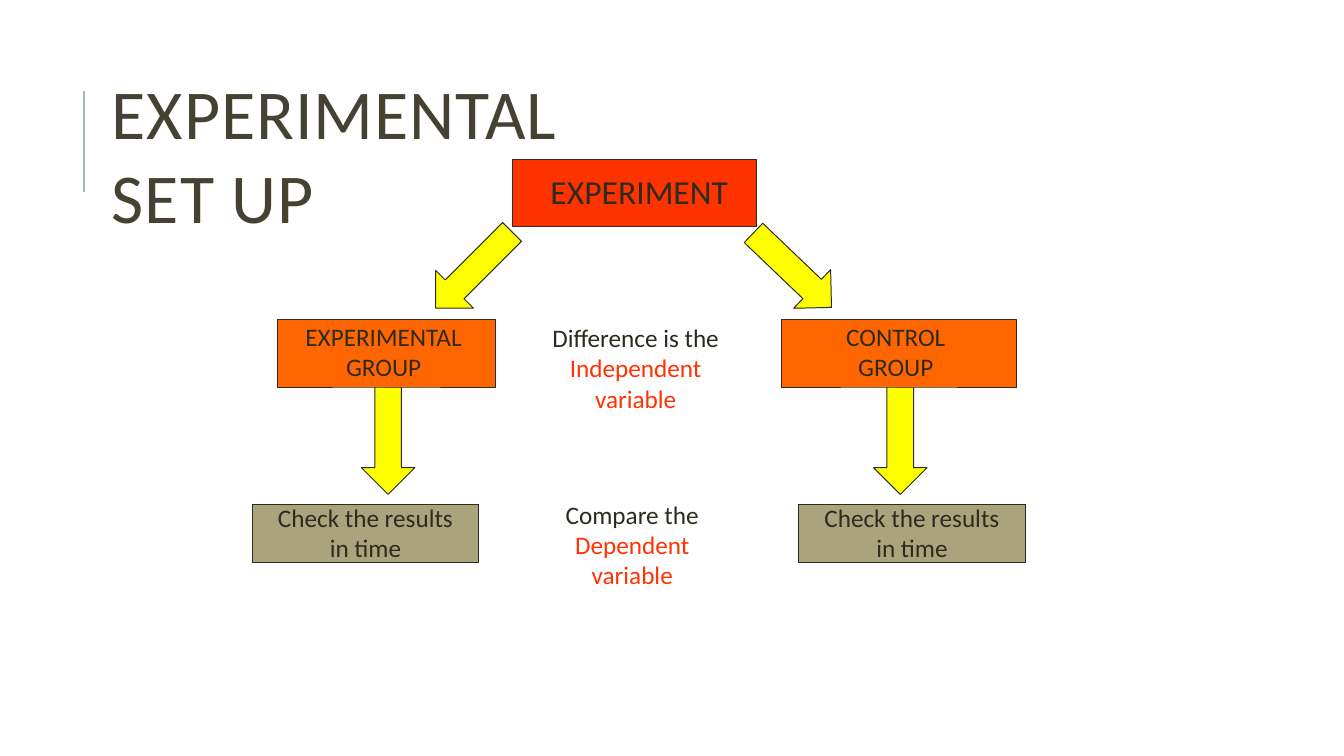
from dataclasses import dataclass
from lxml.etree import SubElement
from pptx import Presentation
from pptx.dml.color import RGBColor as Color
from pptx.enum.shapes import MSO_CONNECTOR as Link, MSO_SHAPE as Kind
from pptx.enum.text import MSO_ANCHOR as Anchor, PP_ALIGN as Align
from pptx.oxml.ns import qn
from pptx.util import Inches, Pt


@dataclass(frozen=True)
class Theme:
    font: str = "Calibri"
    title: str = "464233"
    ink: str = "2D2B20"
    rule: str = "9CBDBC"
    red: str = "FF3300"
    orange: str = "FF6600"
    olive: str = "A9A47B"
    yellow: str = "FFFF00"
    large: int = 50
    medium: int = 24
    small: int = 18
    edge: float = 0.72


theme = Theme()


def write(shape, lines, size, inset, align=Align.CENTER):
    """Fill a shape with (text, colour) lines; inset is left, top, right."""
    frame = shape.text_frame
    frame.word_wrap = True
    frame.vertical_anchor = Anchor.TOP
    frame.margin_left, frame.margin_top, frame.margin_right = map(Inches, inset)
    frame.margin_bottom = 0
    frame.text = "\n".join(text for text, _ in lines)
    for para, (_, color) in zip(frame.paragraphs, lines):
        para.alignment = align
        for run in para.runs:
            run.font.name = theme.font
            run.font.size = Pt(size)
            run.font.color.rgb = Color.from_string(color)
    return frame


def paint(shape, fill):
    shape.shadow.inherit = False
    shape.fill.solid()
    shape.fill.fore_color.rgb = Color.from_string(fill)
    shape.line.color.rgb = Color.from_string(theme.ink)
    shape.line.width = Pt(theme.edge)


def add_box(slide, box, fill, lines, size, inset, align=Align.CENTER):
    shape = slide.shapes.add_shape(Kind.RECTANGLE, *map(Inches, box))
    paint(shape, fill)
    return write(shape, [(line, theme.ink) for line in lines], size, inset, align)


def add_arrow(slide, x, y, turn=0):
    """Place a down arrow by its centre and turn it clockwise."""
    wide, tall = 0.53, 1.07
    box = (x - wide / 2, y - tall / 2, wide, tall)
    arrow = slide.shapes.add_shape(Kind.DOWN_ARROW, *map(Inches, box))
    arrow.rotation = turn
    paint(arrow, theme.yellow)


def add_title(slide, box, text):
    left, top, wide, tall = box
    # Rule beside the title
    x, y = left - 0.28, top + 0.26
    rule = slide.shapes.add_connector(Link.STRAIGHT, *map(Inches, (x, y + 1, x, y)))
    rule.line.color.rgb = Color.from_string(theme.rule)
    rule.line.width = Pt(1.56)
    SubElement(rule._element.spPr, qn("a:effectLst"))
    # Title with slightly open letters
    label = slide.shapes.add_textbox(*map(Inches, box))
    frame = write(label, [(text, theme.title)], theme.large, (0, 0.05, 0), Align.LEFT)
    frame.paragraphs[0].runs[0]._r.get_or_add_rPr().set("spc", "65")


def add_branch(slide, group, check, middle, name):
    """One group box, the arrow below it and its results box."""
    left, top, wide, tall = group
    add_arrow(slide, middle, top + tall + 0.53)
    add_box(slide, group, theme.orange, [name, "GROUP"], theme.small, (0, 0.02, 0.06))
    frame = add_box(slide, check, theme.olive, ["Check the results", "in time"],
                    theme.small, (0, 0, 0))
    frame.paragraphs[0].line_spacing = Pt(20.1)


def add_note(slide, box, lead, term):
    note = slide.shapes.add_textbox(*map(Inches, box))
    write(note, [(lead, theme.ink), (term, theme.red)], theme.small, (0, 0.01, 0.06))


def add_chart_flow(slide, box):
    left, top, wide, tall = box
    upper, lower = top + 1.59, top + 3.42
    # Experiment and the arrows to both groups
    add_box(slide, (left + 2.58, top, 2.42, 0.67), theme.red, ["EXPERIMENT"],
            theme.medium, (0.38, 0.12, 0), Align.LEFT)
    add_arrow(slide, left + 2.2, top + 1.1, 45)
    add_arrow(slide, left + 5.36, top + 1.1, -46.3)
    # Two branches
    add_branch(slide, (left + 0.25, upper, 2.17, 0.67), (left, lower, 2.25, 0.58),
               left + 1.35, "EXPERIMENTAL")
    add_branch(slide, (left + 5.25, upper, 2.33, 0.67), (left + 5.42, lower, 2.25, 0.58),
               left + 6.43, "CONTROL")
    # What sets the branches apart
    add_note(slide, (left + 2.75, upper + 0.02, 2.17, 0.63),
             "Difference is the", "Independent variable")
    add_note(slide, (left + 2.79, lower - 0.06, 2.02, 0.63),
             "Compare the", "Dependent variable")


def main():
    deck = Presentation()
    deck.slide_width, deck.slide_height = Inches(13.33), Inches(7.5)
    slide = deck.slides.add_slide(deck.slide_layouts[6])
    add_title(slide, (1.11, 0.64, 4.68, 0.86), "EXPERIMENTAL SET UP")
    add_chart_flow(slide, (2.5, 1.58, 7.67, 4))
    deck.save("out.pptx")


if __name__ == "__main__":
    main()
